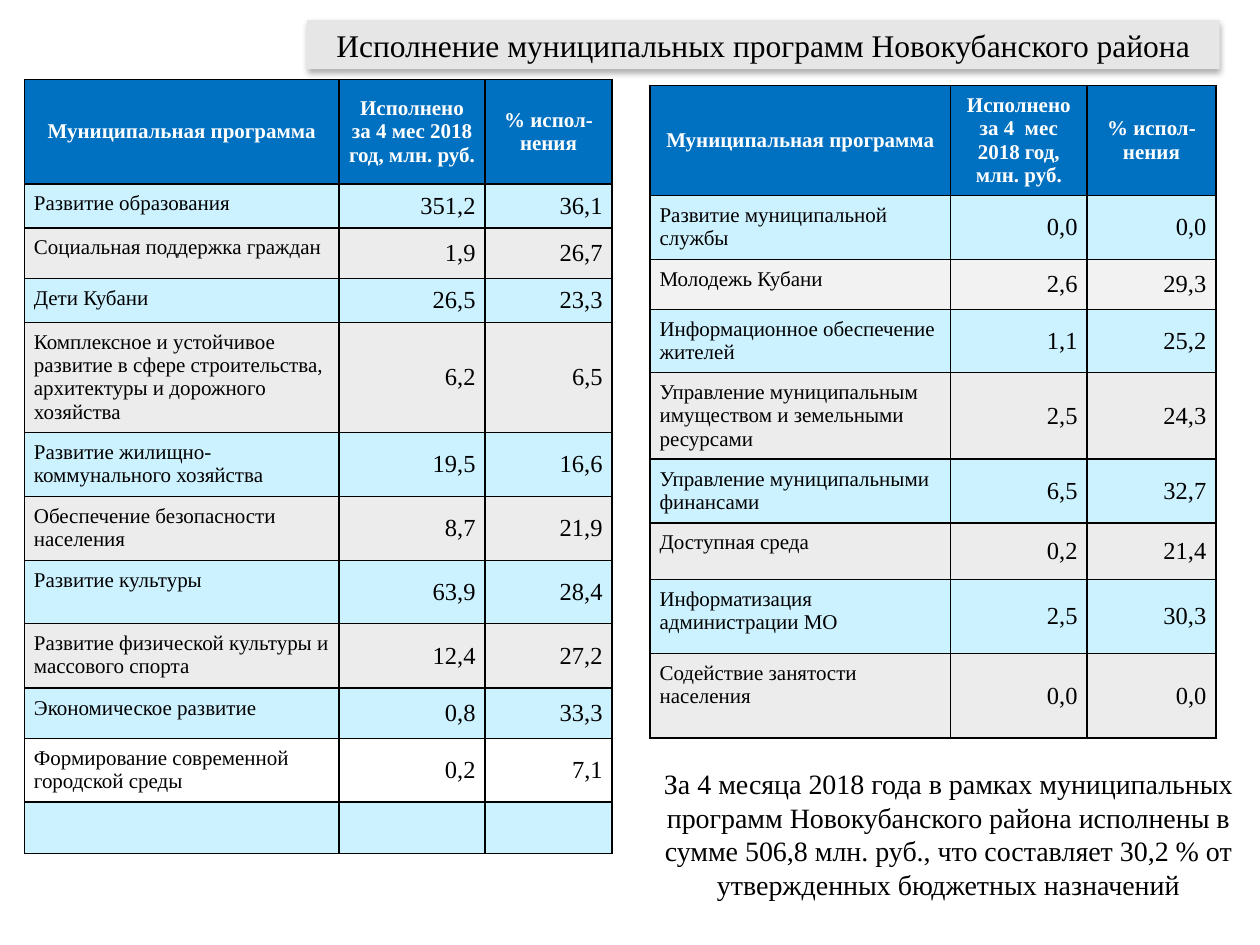
from lxml.etree import SubElement
from pptx import Presentation
from pptx.dml.color import RGBColor
from pptx.enum.shapes import MSO_SHAPE
from pptx.enum.text import MSO_ANCHOR, PP_ALIGN
from pptx.oxml import parse_xml
from pptx.oxml.ns import nsdecls, qn
from pptx.util import Pt

BLACK = RGBColor(0, 0, 0)
WHITE = RGBColor(255, 255, 255)
BLUE = RGBColor(0x00, 0x70, 0xC0)
SKY = RGBColor(0xCD, 0xF2, 0xFF)
GRAY = RGBColor(0xEC, 0xEC, 0xEC)
PALE = RGBColor(0xF2, 0xF2, 0xF2)
SILVER = RGBColor(0xE6, 0xE6, 0xE6)


def write(frame, text, size=12, color=BLACK, bold=False, align=PP_ALIGN.LEFT):
    frame.word_wrap = True
    para = frame.paragraphs[0]
    para.alignment = align
    run = para.add_run()
    run.text = text
    run.font.name = "Times New Roman"
    run.font.size = Pt(size)
    run.font.bold = bold
    run.font.color.rgb = color


deck = Presentation()
deck.slide_width, deck.slide_height = Pt(720), Pt(540)
slide = deck.slides.add_slide(deck.slide_layouts[6])
shapes = slide.shapes

title = shapes.add_shape(MSO_SHAPE.RECTANGLE, Pt(175.5), Pt(11.5), Pt(521.5), Pt(28))
title.fill.solid()
title.fill.fore_color.rgb = SILVER
title.line.fill.background()
title.shadow.inherit = False
glow = title.element.spPr.find(qn("a:effectLst"))
glow.append(parse_xml(
    f'<a:outerShdw {nsdecls("a")} blurRad="44450" dist="27940" dir="5400000" rotWithShape="0">'
    '<a:srgbClr val="000000"><a:alpha val="32000"/></a:srgbClr></a:outerShdw>'))
title.text_frame.vertical_anchor = MSO_ANCHOR.MIDDLE
write(title.text_frame, "Исполнение муниципальных программ Новокубанского района",
      size=18, align=PP_ALIGN.CENTER)

right = [
    (62.6, BLUE, "Муниципальная программа", "Исполнено за 4  мес 2018 год, млн. руб.", "% испол-нения"),
    (36.6, SKY, "Развитие муниципальной службы", "0,0", "0,0"),
    (28.8, PALE, "Молодежь Кубани", "2,6", "29,3"),
    (36, SKY, "Информационное обеспечение жителей", "1,1", "25,2"),
    (49.4, GRAY, "Управление муниципальным имуществом и земельными ресурсами", "2,5", "24,3"),
    (36.5, SKY, "Управление муниципальными финансами", "6,5", "32,7"),
    (32.3, GRAY, "Доступная среда", "0,2", "21,4"),
    (42.3, SKY, "Информатизация администрации МО", "2,5", "30,3"),
    (48.3, GRAY, "Содействие занятости населения", "0,0", "0,0"),
]
left = [
    (59.8, BLUE, "Муниципальная программа", "Исполнено за 4 мес 2018 год, млн. руб.", "% испол-нения"),
    (25.1, SKY, "Развитие образования", "351,2", "36,1"),
    (28.8, GRAY, "Социальная поддержка граждан", "1,9", "26,7"),
    (25.1, SKY, "Дети Кубани", "26,5", "23,3"),
    (63, GRAY, "Комплексное и устойчивое развитие в сфере строительства, архитектуры и дорожного хозяйства", "6,2", "6,5"),
    (36.6, SKY, "Развитие жилищно-коммунального хозяйства", "19,5", "16,6"),
    (36.6, GRAY, "Обеспечение безопасности населения", "8,7", "21,9"),
    (36, SKY, "Развитие культуры", "63,9", "28,4"),
    (36.9, GRAY, "Развитие физической культуры и массового спорта", "12,4", "27,2"),
    (28.8, SKY, "Экономическое развитие", "0,8", "33,3"),
    (36.4, WHITE, "Формирование современной городской среды", "0,2", "7,1"),
    (28.8, SKY, "", "", ""),
]

for x, y, widths, rows in (
    (371.5, 48.9, (171.7, 78, 73.6), right),
    (14, 45.4, (179.8, 83.4, 72.6), left),
):
    high = sum(row[0] for row in rows)
    grid = shapes.add_table(len(rows), 3, Pt(x), Pt(y), Pt(sum(widths)), Pt(high)).table
    for col, width in zip(grid.columns, widths):
        col.width = Pt(width)
    for r, (tall, fill, *texts) in enumerate(rows):
        grid.rows[r].height = Pt(tall)
        for c, text in enumerate(texts):
            cell = grid.cell(r, c)
            props = cell._tc.get_or_add_tcPr()
            for side in ("a:lnL", "a:lnR", "a:lnT", "a:lnB"):
                line = SubElement(props, qn(side), w=str(Pt(1)))
                paint = SubElement(line, qn("a:solidFill"))
                SubElement(paint, qn("a:srgbClr"), val=str(BLACK))
            cell.fill.solid()
            cell.fill.fore_color.rgb = fill
            if not text:
                continue
            cell.margin_left = cell.margin_right = Pt(5.4)
            cell.margin_top = cell.margin_bottom = Pt(4.7)
            if r == 0 or c > 0:
                cell.vertical_anchor = MSO_ANCHOR.MIDDLE
            if r == 0:
                write(cell.text_frame, text, color=WHITE, bold=True, align=PP_ALIGN.CENTER)
            elif c == 0:
                write(cell.text_frame, text)
            else:
                write(cell.text_frame, text, size=14, align=PP_ALIGN.RIGHT)

note = shapes.add_textbox(Pt(371.5), Pt(434.5), Pt(341), Pt(85))
write(note.text_frame,
      "За 4 месяца 2018 года в рамках муниципальных программ Новокубанского района исполнены "
      "в сумме 506,8 млн. руб., что составляет 30,2 % от утвержденных бюджетных назначений",
      size=16, align=PP_ALIGN.CENTER)

deck.save("out.pptx")
